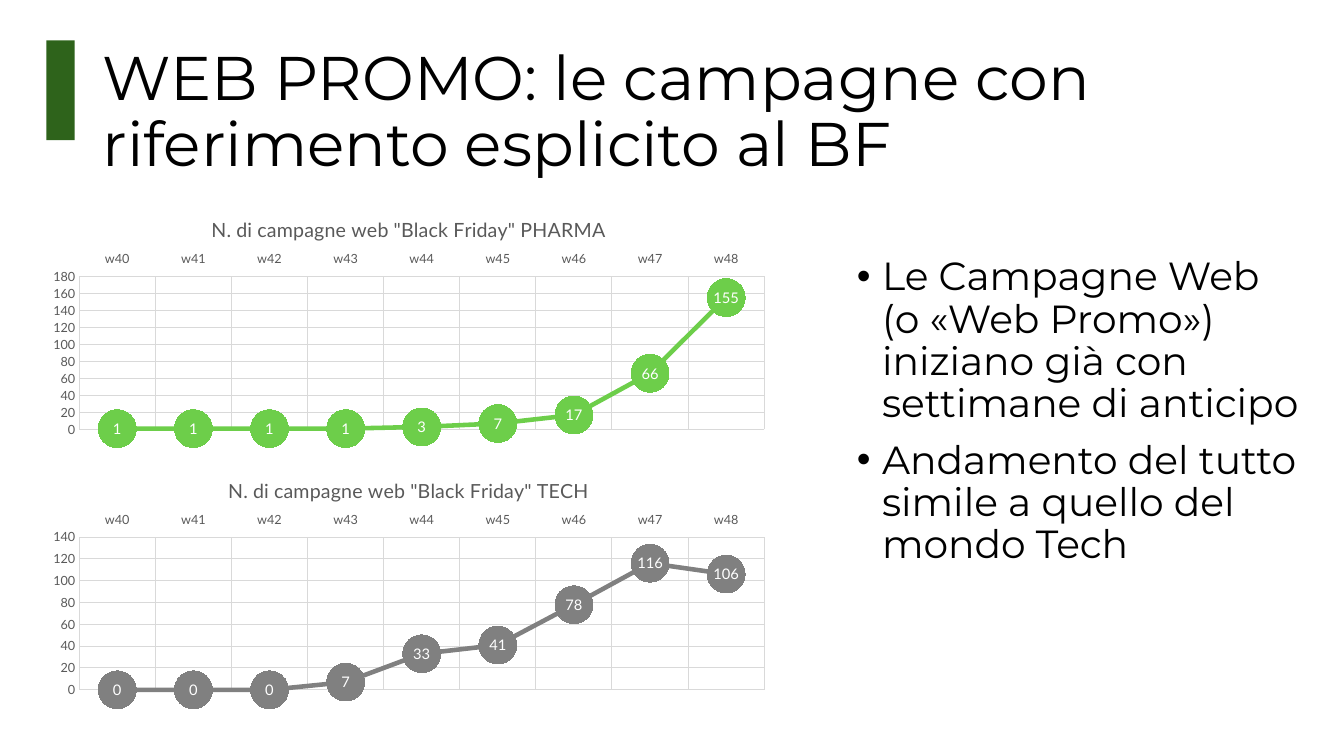
"""Build the slide comparing weekly Black Friday web campaigns for Pharma and Tech."""
from lxml import etree
from pptx import Presentation
from pptx.chart.data import CategoryChartData
from pptx.dml.color import RGBColor
from pptx.enum.chart import XL_CHART_TYPE as ChartType
from pptx.enum.chart import XL_LABEL_POSITION as LabelPosition
from pptx.enum.chart import XL_MARKER_STYLE as MarkerStyle
from pptx.enum.chart import XL_TICK_LABEL_POSITION as TickLabels
from pptx.enum.chart import XL_TICK_MARK as TickMark
from pptx.enum.shapes import MSO_SHAPE as Shape
from pptx.enum.text import MSO_ANCHOR as Anchor
from pptx.enum.text import MSO_AUTO_SIZE as AutoSize
from pptx.enum.text import PP_ALIGN as Align
from pptx.oxml.ns import qn
from pptx.util import Inches, Pt

BLACK = RGBColor(0x00, 0x00, 0x00)
WHITE = RGBColor(0xFF, 0xFF, 0xFF)
DARK_GREEN = RGBColor(0x2E, 0x63, 0x1B)
GREEN = RGBColor(0x6D, 0xCE, 0x4A)
GRAY = RGBColor(0x80, 0x80, 0x80)
TEXT_GRAY = RGBColor(0x59, 0x59, 0x59)
GRID_GRAY = RGBColor(0xD9, 0xD9, 0xD9)

WEEKS = [f"w{week}" for week in range(40, 49)]
CAMPAIGNS = [
    ("PHARMA", 2, GREEN, 180, (1, 1, 1, 1, 3, 7, 17, 66, 155)),
    ("TECH", 4.59, GRAY, 140, (0, 0, 0, 7, 33, 41, 78, 116, 106)),
]
POINTS = [
    "Le Campagne Web (o «Web Promo») iniziano già con settimane di anticipo",
    "Andamento del tutto simile a quello del mondo Tech",
]
PLOT_LAYOUT = [
    ("layoutTarget", "inner"), ("xMode", "edge"), ("yMode", "edge"),
    ("x", "0.054"), ("y", "0.304"), ("w", "0.927"), ("h", "0.624"),
]


def style_font(font, name, size, color):
    font.name = name
    font.size = Pt(size)
    font.color.rgb = color
    font.bold = False


def style_line(line, color, width):
    line.color.rgb = color
    line.width = Pt(width)


deck = Presentation()
deck.slide_width = Inches(13.33)
deck.slide_height = Inches(7.5)
page = deck.slides.add_slide(deck.slide_layouts[5])

accent = page.shapes.add_shape(
    Shape.RECTANGLE, Inches(0.46), Inches(0.4), Inches(0.28), Inches(0.99))
accent.shadow.inherit = False
accent.fill.solid()
accent.fill.fore_color.rgb = DARK_GREEN
accent.line.fill.background()

title = page.shapes.title
title.left, title.top = Inches(0.92), Inches(0.4)
title.width, title.height = Inches(11.5), Inches(1.45)
title.text_frame.text = "WEB PROMO: le campagne con riferimento esplicito al BF"
title.text_frame.word_wrap = True
title.text_frame.auto_size = AutoSize.NONE
title.text_frame.vertical_anchor = Anchor.MIDDLE
heading = title.text_frame.paragraphs[0]
heading.alignment = Align.LEFT
heading.line_spacing = 0.9
style_font(heading.font, "Montserrat", 44, BLACK)

box = page.shapes.add_textbox(Inches(8.4), Inches(2.5), Inches(4.66), Inches(4.26))
box.text_frame.word_wrap = True
box.text_frame.text = "\n".join(POINTS)
for index, para in enumerate(box.text_frame.paragraphs):
    para.line_spacing = 0.9
    para.space_before = Pt(10 if index else 0)
    properties = para._p.get_or_add_pPr()
    properties.set("marL", str(Inches(0.25)))
    properties.set("indent", str(Inches(-0.25)))
    etree.SubElement(properties, qn("a:buFont"), typeface="Arial")
    etree.SubElement(properties, qn("a:buChar"), char="•")
    style_font(para.font, "Montserrat", 28, BLACK)

for sector, top, color, maximum, counts in CAMPAIGNS:
    data = CategoryChartData()
    data.categories = WEEKS
    data.add_series("Series 1", counts)
    chart = page.shapes.add_chart(
        ChartType.LINE_MARKERS, Inches(0.39), Inches(top),
        Inches(7.33), Inches(2.44), data).chart
    style_font(chart.font, "Lato", 10, BLACK)
    chart.has_legend = False
    chart.has_title = True
    chart.chart_title.include_in_layout = False
    chart.chart_title.text_frame.text = f'N. di campagne web "Black Friday" {sector}'
    style_font(chart.chart_title.text_frame.paragraphs[0].font, "Lato", 14, TEXT_GRAY)

    for axis in (chart.category_axis, chart.value_axis):
        axis.major_tick_mark = axis.minor_tick_mark = TickMark.NONE
        axis.has_major_gridlines = True
        style_line(axis.major_gridlines.format.line, GRID_GRAY, 0.75)
        style_font(axis.tick_labels.font, "Lato", 9, TEXT_GRAY)
    style_line(chart.category_axis.format.line, GRID_GRAY, 0.75)
    chart.category_axis.tick_label_position = TickLabels.HIGH
    chart.value_axis.format.line.fill.background()
    chart.value_axis.minimum_scale = 0
    chart.value_axis.maximum_scale = maximum
    chart.value_axis.major_unit = 20

    plot = chart.plots[0]
    plot.vary_by_categories = False
    series = plot.series[0]
    series.smooth = False
    style_line(series.format.line, color, 3.25)
    series.marker.style = MarkerStyle.CIRCLE
    series.marker.size = 27
    series.marker.format.fill.solid()
    series.marker.format.fill.fore_color.rgb = color
    series.marker.format.line.fill.background()
    labels = series.data_labels
    labels.show_value = True
    labels.position = LabelPosition.CENTER
    style_font(labels.font, "Lato", 10.5, WHITE)

    plot_area = chart._chartSpace.chart.plotArea
    for old_layout in plot_area.findall(qn("c:layout")):
        plot_area.remove(old_layout)
    layout = etree.Element(qn("c:layout"))
    manual = etree.SubElement(layout, qn("c:manualLayout"))
    for tag, value in PLOT_LAYOUT:
        etree.SubElement(manual, qn(f"c:{tag}"), val=value)
    plot_area.insert(0, layout)

deck.save("out.pptx")
